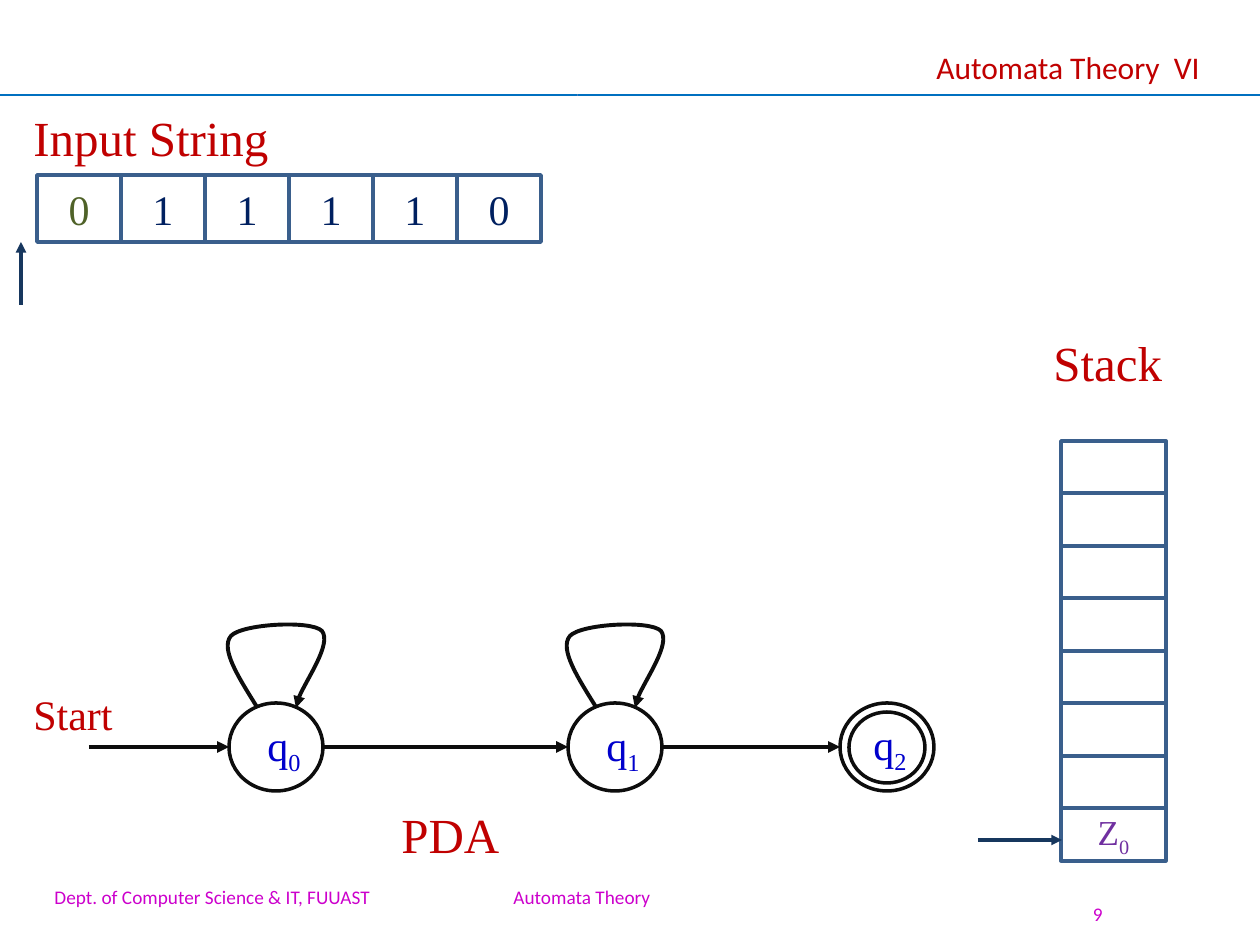
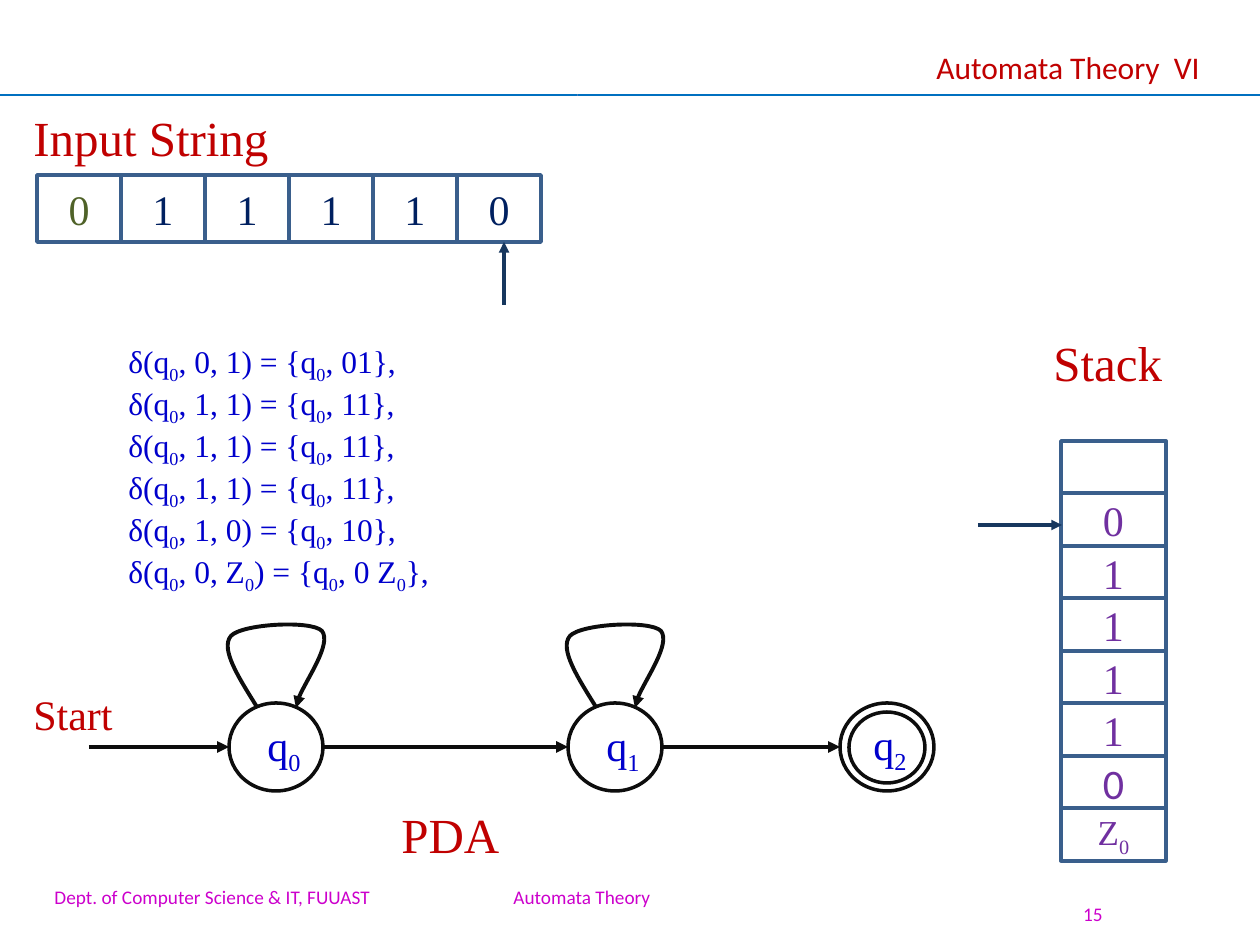
from lxml.etree import SubElement
from pptx import Presentation
from pptx.dml.color import RGBColor
from pptx.enum.shapes import MSO_CONNECTOR as Wire, MSO_SHAPE as Form
from pptx.enum.text import MSO_ANCHOR as Anchor, PP_ALIGN as Align
from pptx.oxml.ns import qn
from pptx.util import Pt

PX = 914400 / 126
HUES = {
    "white": "FFFFFF", "red": "C00000", "pink": "CC00CC", "sky": "0070C0",
    "steel": "4B7EBC", "frame": "3A5F8C", "navy": "002060", "olive": "4F6228",
    "point": "17375E", "black": "0D0D0D", "blue": "0000CC", "plum": "7030A0",
}
HUES = {name: RGBColor.from_string(code) for name, code in HUES.items()}
SERIF, SANS = "Times New Roman", "Calibri"

TAPE = "011110"
STATES = [(229, 713), (568, 713), (840, 712)]
LOOP = [(28, 707), (10, 678), (-9, 649), (2, 636), (13, 624), (82, 620),
        (93, 631), (103, 644), (66, 696), (67, 708)]
RULES = ["δ(q_0, 0, 1) = {q_0, 01},", *["δ(q_0, 1, 1) = {q_0, 11},"] * 3,
         "δ(q_0, 1, 0) = {q_0, 10},", "δ(q_0, 0, Z_0) = {q_0, 0 Z_0},"]
LABELS = [
    ("Automata Theory  VI", 924, 42, 292, 50, 18, "red", SANS),
    ("Stack", 1041, 326, 135, 72, 28, "red", SERIF),
    ("Input String", 21, 101, 263, 72, 28, "red", SERIF),
    ("Start", 21, 682, 106, 64, 24, "red", SERIF),
    ("PDA", 389, 798, 125, 72, 28, "red", SERIF),
    ("Dept. of Computer Science & IT, FUUAST", 42, 879, 345, 36, 11, "pink", SANS),
    ("Automata Theory", 501, 879, 163, 36, 11, "pink", SANS),
]
LINES = [
    (0, 95, 1260, 95, "sky", 0.75, False),
    (577, 95, 578, 95, "steel", 0.75, False),
    (89, 747, 229, 747, "black", 2.25, True),
    (324, 747, 568, 747, "black", 2.25, True),
    (663, 747, 840, 747, "black", 2.25, True),
]
PAGES = [
    ("9", 21, 840, [""] * 7 + ["Z_0"], []),
    ("15", 504, 525, ["", "0", "1", "1", "1", "1", "0", "Z_0"], RULES),
]


def ink(item, hue, width, tip=False):
    item.line.color.rgb = HUES[hue]
    item.line.width = Pt(width)
    props = item._element.spPr
    if tip:
        SubElement(props.find(qn("a:ln")), qn("a:tailEnd"), type="triangle")
    SubElement(props, qn("a:effectLst"))


def put(slide, text, x, y, w, h, size, hue, face=SERIF, form=None,
        edge="frame", fill=None, align=Align.LEFT, anchor=Anchor.TOP):
    area = [round(v * PX) for v in (x, y, w, h)]
    if form is None:
        box = slide.shapes.add_textbox(*area)
    else:
        box = slide.shapes.add_shape(form, *area)
        if fill:
            box.fill.solid()
            box.fill.fore_color.rgb = HUES[fill]
        else:
            box.fill.background()
        ink(box, edge, 2)
    frame = box.text_frame
    frame.word_wrap = form is not None
    frame.vertical_anchor = anchor
    para = frame.paragraphs[0]
    para.alignment = align
    head, *tails = text.split("_")
    parts = [(head, False)]
    for tail in tails:
        parts += [(tail[0], True), (tail[1:], False)]
    for part, low in parts:
        if part:
            run = para.add_run()
            run.text = part
            run.font.size = Pt(size)
            run.font.name = face
            run.font.color.rgb = HUES[hue]
            if low:
                run.font._element.set("baseline", "-25000")


deck = Presentation()
deck.slide_width = round(1260 * PX)
deck.slide_height = round(945 * PX)
cell = {"form": Form.RECTANGLE, "align": Align.CENTER, "anchor": Anchor.MIDDLE}
ring = {"form": Form.OVAL, "edge": "black"}

for number, head_x, top_y, stack, rules in PAGES:
    slide = deck.slides.add_slide(deck.slide_layouts[6])
    for label in LABELS:
        put(slide, *label)
    put(slide, number, 1046, 893, 69, 42, 11, "pink", SANS,
        align=Align.RIGHT, anchor=Anchor.MIDDLE)

    for i, mark in enumerate(stack):
        put(slide, mark, 1061, 441 + 105 * i // 2, 105, 53,
            20 if "_" in mark else 24, "plum", SANS if i == 6 else SERIF,
            fill="white", **cell)
    for i, mark in enumerate(TAPE):
        put(slide, mark, 37 + 84 * i, 175, 84, 67, 24,
            "navy" if i else "olive", **cell)

    for i, (x, text_y) in enumerate(STATES):
        put(slide, "", x, 703, 94, 88, 24, "blue", **ring)
        put(slide, f"q_{i}", x + (21 if i == 2 else 26), text_y, 60, 64, 24, "blue")
        if i == 2:
            put(slide, "", x + 9, 712, 76, 71, 24, "blue", **ring)
            continue
        start, *bends = [(x + dx, y) for dx, y in LOOP]
        pen = slide.shapes.build_freeform(*start, scale=PX)
        pen.add_line_segments(bends, close=False)
        loop = pen.convert_to_shape()
        loop.fill.background()
        ink(loop, "black", 2.25, True)
        trail = loop._element.find(".//" + qn("a:path"))
        steps = trail.findall(qn("a:lnTo"))
        for j in range(0, len(steps), 3):
            curve = SubElement(trail, qn("a:cubicBezTo"))
            for step in steps[j:j + 3]:
                curve.append(step[0])
                trail.remove(step)

    marks = [(head_x, 305, head_x, 242, "point", 2, True),
             (978, top_y, 1062, top_y, "point", 2, True)]
    for *ends, hue, width, tip in LINES + marks:
        wire = slide.shapes.add_connector(
            Wire.STRAIGHT, *[round(v * PX) for v in ends])
        ink(wire, hue, width, tip)

    for i, rule in enumerate(rules):
        put(slide, rule, 116, 336 + 42 * i, 343 if "Z" in rule else 307, 50, 18, "blue")

deck.save("out.pptx")
